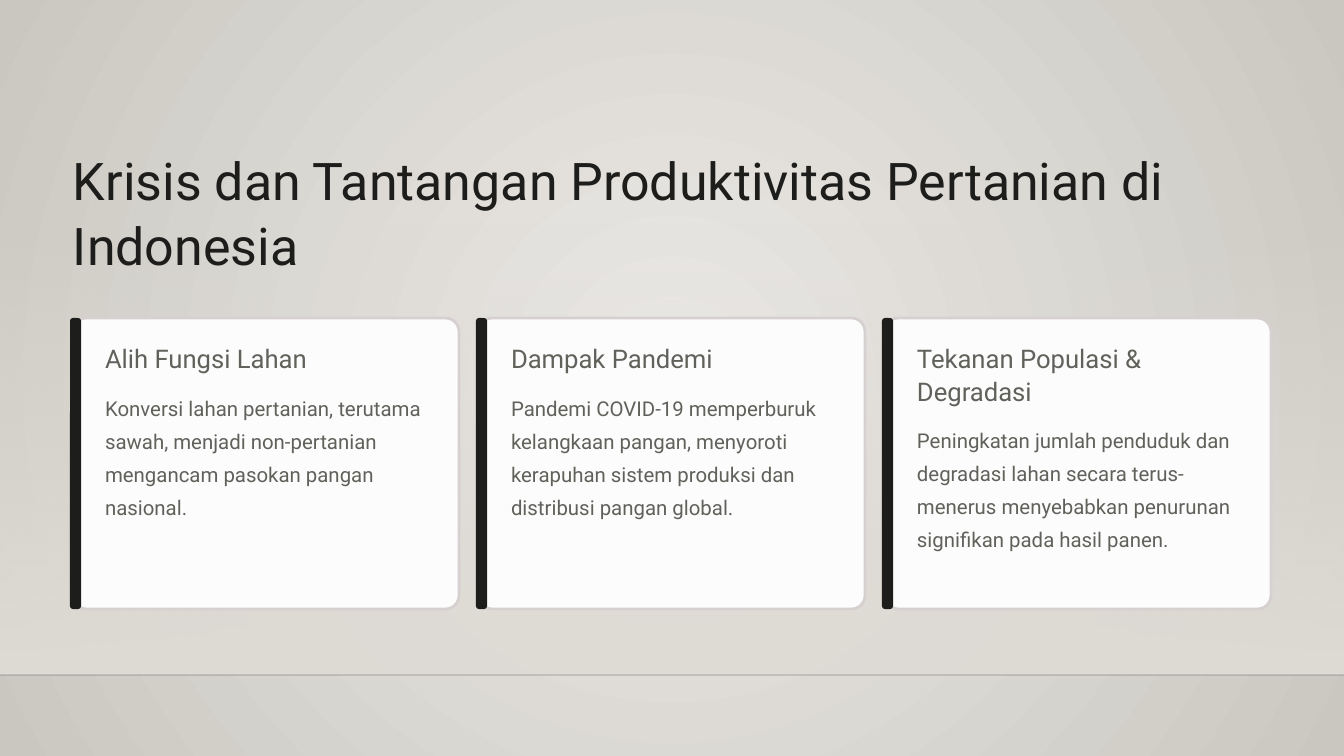
"""Build the slide on the crisis of farm productivity in Indonesia."""
from dataclasses import dataclass

from lxml import etree
from pptx import Presentation
from pptx import util as u
from pptx.dml.color import RGBColor
from pptx.enum import shapes, text
from pptx.oxml import parse_xml
from pptx.oxml.ns import nsdecls, qn

SCALE = 914400 / 84
WIDTH, HEIGHT = 1344, 756
FONT = "Roboto"
COLORS = {
    "glow": "ECEAE7",
    "edge": "CAC7C1",
    "veil": "DFDBD5",
    "rule": "000001",
    "ink": "1D1D1B",
    "body": "61615C",
    "card": "FCFCFC",
    "border": "D6D0D0",
}
RADIAL = ('<a:path path="circle">'
          '<a:fillToRect l="50000" t="50000" r="50000" b="50000"/></a:path>')
DOWNWARD = '<a:lin ang="5400000" scaled="0"/>'
HORIZON = 675
MARGIN = 73
CARD_TOP, CARD_WIDTH, CARD_HEIGHT, CARD_PITCH = 318, 386, 291, 406
HEADING_LINE = 32


@dataclass(frozen=True)
class Box:
    left: int
    top: int
    width: int
    height: int

    def emu(self) -> tuple[u.Emu, ...]:
        return tuple(px(n) for n in (self.left, self.top, self.width, self.height))


@dataclass(frozen=True)
class TextStyle:
    size: float
    leading: float
    color: str


@dataclass(frozen=True)
class Card:
    heading: str
    body: str
    heading_lines: int = 1


TITLE = TextStyle(44.5, 55.5, "ink")
HEADING = TextStyle(22, 27.5, "body")
BODY = TextStyle(17.5, 28.5, "body")

CARDS = [
    Card("Alih Fungsi Lahan",
         "Konversi lahan pertanian, terutama sawah, menjadi non-pertanian "
         "mengancam pasokan pangan nasional."),
    Card("Dampak Pandemi",
         "Pandemi COVID-19 memperburuk kelangkaan pangan, menyoroti kerapuhan "
         "sistem produksi dan distribusi pangan global."),
    Card("Tekanan Populasi & Degradasi",
         "Peningkatan jumlah penduduk dan degradasi lahan secara terus-menerus "
         "menyebabkan penurunan signifikan pada hasil panen.", 2),
]


def px(length: int) -> u.Emu:
    return u.Emu(round(length * SCALE))


def rgb(name: str) -> RGBColor:
    return RGBColor.from_string(COLORS[name])


def set_gradient(element, start: str, end: str, direction: str, start_alpha: int = 100) -> None:
    """Replace the first solid fill in the element with a two-stop gradient."""
    solid = next(element.iter(qn("a:solidFill")))
    gradient = parse_xml(
        f'<a:gradFill {nsdecls("a")} rotWithShape="1"><a:gsLst>'
        f'<a:gs pos="0"><a:srgbClr val="{COLORS[start]}">'
        f'<a:alpha val="{start_alpha * 1000}"/></a:srgbClr></a:gs>'
        f'<a:gs pos="100000"><a:srgbClr val="{COLORS[end]}"/></a:gs>'
        f'</a:gsLst>{direction}</a:gradFill>')
    solid.getparent().replace(solid, gradient)


def add_panel(slide, kind, box: Box, color: str, radius: float = 0, border: str = ""):
    shape = slide.shapes.add_shape(kind, *box.emu())
    shape.shadow.inherit = False
    shape.fill.solid()
    shape.fill.fore_color.rgb = rgb(color)
    if radius:
        shape.adjustments[0] = radius
    if border:
        shape.line.color.rgb = rgb(border)
        shape.line.width = u.Pt(2.4)
    else:
        shape.line.fill.background()
    return shape


def add_text(slide, box: Box, words: str, style: TextStyle) -> None:
    frame = slide.shapes.add_textbox(*box.emu()).text_frame
    frame.word_wrap = True
    frame.vertical_anchor = text.MSO_ANCHOR.TOP
    frame.margin_left = frame.margin_top = frame.margin_right = frame.margin_bottom = 0
    paragraph = frame.paragraphs[0]
    paragraph.text = words
    paragraph.line_spacing = u.Pt(style.leading)
    paragraph.font.name = FONT
    paragraph.font.size = u.Pt(style.size)
    paragraph.font.color.rgb = rgb(style.color)


def add_backdrop(slide) -> None:
    background = slide.background.fill
    background.solid()
    background.fore_color.rgb = rgb("edge")
    set_gradient(slide.element, "glow", "edge", RADIAL)

    veil = add_panel(slide, shapes.MSO_SHAPE.RECTANGLE,
                     Box(0, 223, WIDTH, HORIZON - 223), "veil")
    set_gradient(veil.element, "veil", "veil", DOWNWARD, start_alpha=0)

    rule = slide.shapes.add_connector(
        shapes.MSO_CONNECTOR.STRAIGHT, px(0), px(HORIZON), px(WIDTH), px(HORIZON))
    rule.line.color.rgb = rgb("rule")
    rule.line.width = u.Pt(1)
    color = next(rule.element.iter(qn("a:srgbClr")))
    etree.SubElement(color, qn("a:alpha"), val="20000")
    etree.SubElement(rule.element.spPr, qn("a:effectLst"))


def add_card(slide, card: Card, left: int) -> None:
    rounded = shapes.MSO_SHAPE.ROUNDED_RECTANGLE
    add_panel(slide, rounded, Box(left, CARD_TOP, CARD_WIDTH, CARD_HEIGHT),
              "card", 0.046, "border")
    add_panel(slide, rounded, Box(left - 3, CARD_TOP, 11, CARD_HEIGHT), "ink", 0.279)
    heading_height = card.heading_lines * HEADING_LINE
    heading_top = CARD_TOP + 24
    add_text(slide, Box(left + 32, heading_top, 330, heading_height), card.heading, HEADING)
    add_text(slide, Box(left + 32, heading_top + heading_height + 13, 330, 166),
             card.body, BODY)


def main() -> None:
    presentation = Presentation()
    presentation.slide_width, presentation.slide_height = px(WIDTH), px(HEIGHT)
    slide = presentation.slides.add_slide(presentation.slide_layouts[6])
    add_backdrop(slide)
    add_text(slide, Box(MARGIN, 146, 1198, 130),
             "Krisis dan Tantangan Produktivitas Pertanian di Indonesia", TITLE)
    for index, card in enumerate(CARDS):
        add_card(slide, card, MARGIN + index * CARD_PITCH)
    presentation.save("out.pptx")


if __name__ == "__main__":
    main()
